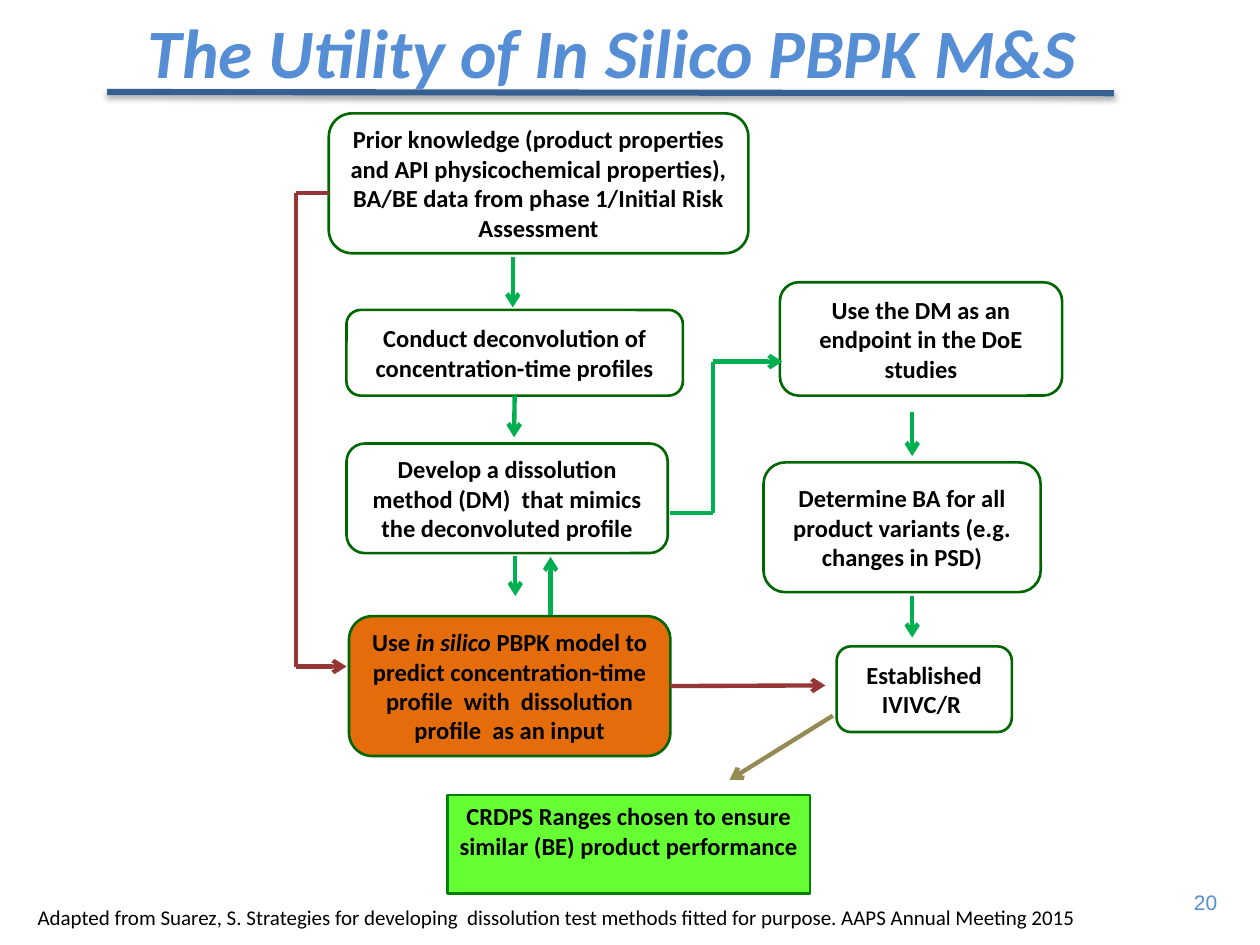
import pptx
import pptx.util
from lxml import etree
from pptx.dml.color import RGBColor
from pptx.enum.shapes import MSO_CONNECTOR, MSO_SHAPE
from pptx.enum.text import MSO_ANCHOR, PP_ALIGN
from pptx.oxml.ns import qn
from pptx.util import Inches

BLACK = RGBColor(0x00, 0x00, 0x00)
TITLE_BLUE = RGBColor(0x55, 0x8E, 0xD5)
RULE_BLUE = RGBColor(0x37, 0x60, 0x92)
BOX_GREEN = RGBColor(0x00, 0x66, 0x00)
RESULT_EDGE = RGBColor(0x00, 0x80, 0x00)
RESULT_FILL = RGBColor(0x66, 0xFF, 0x33)
MODEL_ORANGE = RGBColor(0xE4, 0x6C, 0x0A)
FLOW_GREEN = RGBColor(0x00, 0xB0, 0x50)
FLOW_RED = RGBColor(0x95, 0x37, 0x35)
FLOW_TAN = RGBColor(0x94, 0x8A, 0x54)


class FlowSlide:
    font = "Calibri"
    box_size = 14
    box_line = 1.5
    flow_line = 2.5

    def __init__(self, prs):
        self.s = prs.slides.add_slide(prs.slide_layouts[6])

    def add_runs(self, tf, runs, size, color=BLACK, bold=False, italic=False,
                 align=PP_ALIGN.CENTER, font=None):
        """Fill the first paragraph; runs are (text, italic) pairs or one string."""
        p = tf.paragraphs[0]
        p.alignment = align
        for text, slanted in [(runs, italic)] if isinstance(runs, str) else runs:
            r = p.add_run()
            r.text = text
            r.font.name = font or self.font
            r.font.size = pptx.util.Pt(size)
            r.font.bold = bold
            r.font.italic = slanted
            r.font.color.rgb = color

    def text(self, at, text, size, wrap=False, anchor=MSO_ANCHOR.TOP, **style):
        tf = self.s.shapes.add_textbox(*map(Inches, at)).text_frame
        tf.word_wrap = wrap
        tf.vertical_anchor = anchor
        self.add_runs(tf, text, size, **style)

    def box(self, at, runs, fill=None, edge=BOX_GREEN,
            shape=MSO_SHAPE.ROUNDED_RECTANGLE, anchor=MSO_ANCHOR.MIDDLE):
        sp = self.s.shapes.add_shape(shape, *map(Inches, at))
        sp.shadow.inherit = False
        if fill is None:
            sp.fill.background()
        else:
            sp.fill.solid()
            sp.fill.fore_color.rgb = fill
        sp.line.color.rgb = edge
        sp.line.width = pptx.util.Pt(self.box_line)
        sp.text_frame.word_wrap = True
        sp.text_frame.vertical_anchor = anchor
        self.add_runs(sp.text_frame, runs, self.box_size, bold=True)
        return sp

    def line(self, start, end, color, width=None, arrow=False, begin=None, shadow=False):
        """Draw a straight line; begin is (shape, side) to join its start to."""
        cn = self.s.shapes.add_connector(
            MSO_CONNECTOR.STRAIGHT, *map(Inches, (*start, *end)))
        if begin:
            cn.begin_connect(*begin)
        cn.line.color.rgb = color
        cn.line.width = pptx.util.Pt(width or self.flow_line)
        props = cn._element.spPr
        if arrow:
            etree.SubElement(props.find(qn("a:ln")), qn("a:tailEnd"), type="arrow")
        effects = etree.SubElement(props, qn("a:effectLst"))
        if shadow:
            outer = etree.SubElement(effects, qn("a:outerShdw"), blurRad="40000",
                                     dist="20000", dir="5400000", rotWithShape="0")
            black = etree.SubElement(outer, qn("a:srgbClr"), val="000000")
            etree.SubElement(black, qn("a:alpha"), val="38000")

    def arrow(self, start, end, color=FLOW_GREEN, begin=None):
        self.line(start, end, color, arrow=True, begin=begin)

    def elbow(self, points, color):
        """Draw a bent path whose last leg carries the arrowhead."""
        for start, end in zip(points[:-2], points[1:-1]):
            self.line(start, end, color)
        self.arrow(points[-2], points[-1], color)


def main():
    prs = pptx.Presentation()
    prs.slide_width, prs.slide_height = Inches(10), Inches(7.5)
    flow = FlowSlide(prs)

    flow.text((9.35, 7.01, 0.41, 0.3), "20", 12, color=TITLE_BLUE,
              align=PP_ALIGN.RIGHT, font="Arial")
    flow.text((0.36, 0, 9, 0.81), "The Utility of In Silico PBPK M&S", 39.6, wrap=True,
              anchor=MSO_ANCHOR.MIDDLE, color=TITLE_BLUE, bold=True, italic=True)

    flow.box((2.61, 0.9, 3.33, 1.11),
             "Prior knowledge (product properties and API physicochemical properties), "
             "BA/BE data from phase 1/Initial Risk Assessment")
    deconvolution = flow.box((2.75, 2.46, 2.67, 0.68),
                             "Conduct deconvolution of concentration-time profiles")
    flow.box((2.75, 3.52, 2.55, 0.87),
             "Develop a dissolution method (DM)  that mimics the deconvoluted profile")
    model = flow.box((2.77, 4.89, 2.55, 1.11),
                     [("Use ", False), ("in silico ", True),
                      ("PBPK model to predict concentration-time profile  with  "
                       "dissolution profile  as an input", False)],
                     fill=MODEL_ORANGE)
    flow.box((6.19, 2.24, 2.24, 0.9), "Use the DM as an endpoint in the DoE studies")
    flow.box((6.06, 3.67, 2.2, 1.03),
             "Determine BA for all product variants (e.g. changes in PSD)")
    flow.box((6.64, 5.13, 1.39, 0.68), "Established IVIVC/R ")
    flow.box((3.55, 6.31, 2.88, 0.78),
             "CRDPS Ranges chosen to ensure similar (BE) product performance",
             fill=RESULT_FILL, edge=RESULT_EDGE, shape=MSO_SHAPE.RECTANGLE,
             anchor=MSO_ANCHOR.TOP)

    flow.arrow((4.07, 2.04), (4.07, 2.44))
    flow.arrow((4.08, 3.14), (4.08, 3.47), begin=(deconvolution, 2))
    flow.arrow((4.09, 4.41), (4.09, 4.73))
    flow.arrow((4.37, 4.88), (4.37, 4.42))
    flow.arrow((7.24, 3.27), (7.24, 3.62))
    flow.arrow((7.24, 4.73), (7.24, 5.06))
    flow.arrow((5.32, 5.44), (6.55, 5.44), FLOW_RED, begin=(model, 3))
    flow.arrow((6.61, 5.68), (5.79, 6.19), FLOW_TAN)
    flow.elbow([(5.32, 4.07), (5.66, 4.07), (5.66, 2.87), (6.21, 2.87)], FLOW_GREEN)
    flow.elbow([(2.61, 1.53), (2.35, 1.53), (2.35, 5.29), (2.75, 5.29)], FLOW_RED)

    flow.line((0.85, 0.73), (8.84, 0.74), RULE_BLUE, width=3.5, shadow=True)
    flow.text((0.2, 7.13, 8.53, 0.3),
              "Adapted from Suarez, S. Strategies for developing  dissolution test methods "
              "fitted for purpose. AAPS Annual Meeting 2015", 12, align=PP_ALIGN.LEFT)
    prs.save("out.pptx")


if __name__ == "__main__":
    main()
